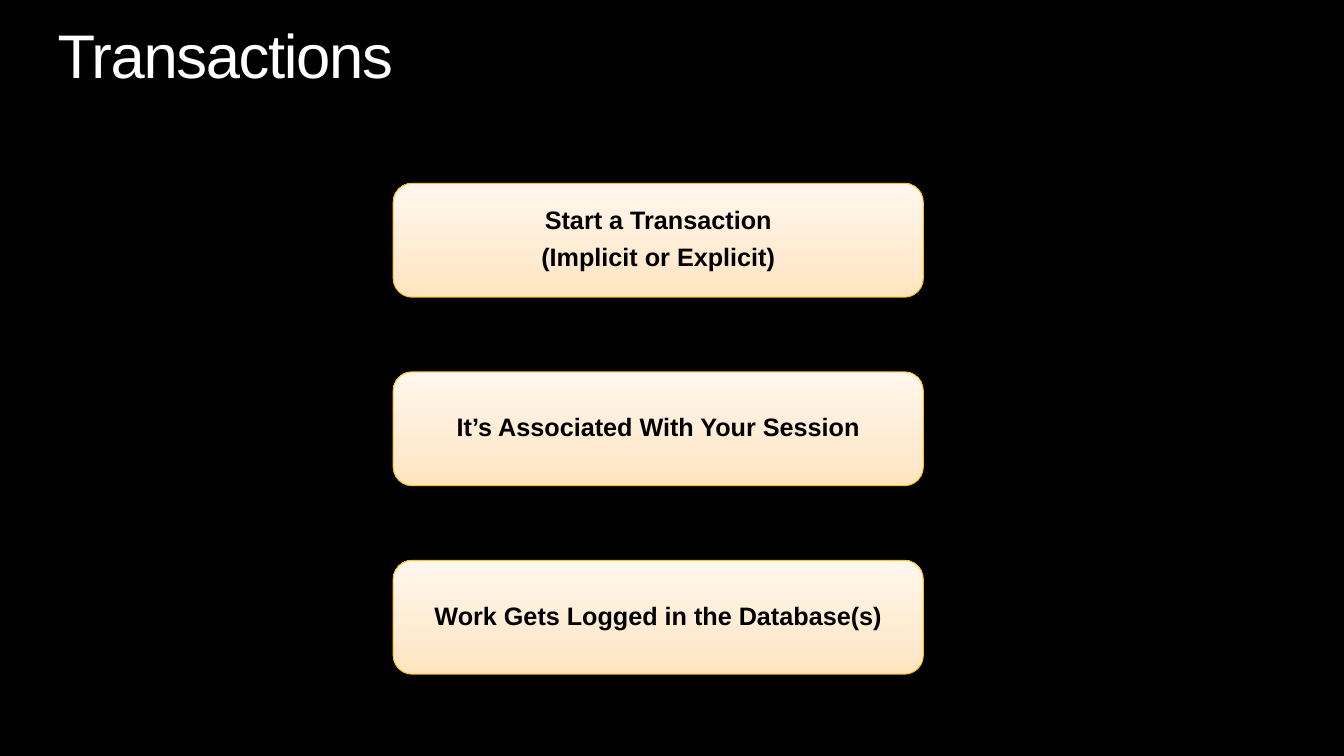
from copy import deepcopy
from dataclasses import dataclass

from pptx import Presentation
from pptx.dml.color import RGBColor as RGB
from pptx.enum.shapes import MSO_SHAPE as SHAPE
from pptx.enum.text import MSO_ANCHOR as ANCHOR, PP_ALIGN as ALIGN
from pptx.util import Cm, Pt


@dataclass(frozen=True)
class Theme:
    font: str = "Arial"
    background: RGB = RGB(0, 0, 0)
    title: RGB = RGB(255, 255, 255)
    text: RGB = RGB(0, 0, 0)
    outline: RGB = RGB.from_string("FFC21F")
    gradient: tuple = ((0, "FFE4BE"), (0.35, "FFEBD1"), (1, "FFF7EE"))
    title_size: int = 44
    text_size: int = 18


THEME = Theme()

STEPS = (
    ("Start a Transaction", "(Implicit or Explicit)"),
    ("It’s Associated With Your Session",),
    ("Work Gets Logged in the Database(s)",),
)


def set_margins(tf, margin):
    tf.margin_left = tf.margin_right = margin
    tf.margin_top = tf.margin_bottom = margin


def add_run(p, text, size, color, bold):
    p.line_spacing = 0.9
    r = p.add_run()
    r.text = text
    r.font.name = THEME.font
    r.font.size = Pt(size)
    r.font.bold = bold
    r.font.color.rgb = color
    return r


def fill_gradient(fill):
    fill.gradient()
    fill.gradient_angle = 90
    stops = fill._fill._gradFill.gsLst
    stops.insert(1, deepcopy(stops[0]))
    for stop, (position, color) in zip(fill.gradient_stops, THEME.gradient):
        stop.position = position
        stop.color.rgb = RGB.from_string(color)


def place_title(s, text, left, top, width, height):
    sp = s.shapes.title
    sp.left, sp.top, sp.width, sp.height = left, top, width, height
    tf = sp.text_frame
    tf.word_wrap = True
    tf.vertical_anchor = ANCHOR.TOP
    set_margins(tf, 0)
    p = tf.paragraphs[0]
    p.alignment = ALIGN.LEFT
    r = add_run(p, text, THEME.title_size, THEME.title, False)
    r.font._element.set("spc", "-100")


def add_step(s, lines, left, top, width, height):
    sp = s.shapes.add_shape(SHAPE.ROUNDED_RECTANGLE, left, top, width, height)
    sp.shadow.inherit = False
    fill_gradient(sp.fill)
    sp.line.color.rgb = THEME.outline
    sp.line.width = Pt(0.75)
    tf = sp.text_frame
    tf.word_wrap = True
    tf.vertical_anchor = ANCHOR.MIDDLE
    set_margins(tf, Cm(0.18))
    for i, line in enumerate(lines):
        p = tf.add_paragraph() if i else tf.paragraphs[0]
        p.alignment = ALIGN.CENTER
        p.space_after = Pt(7)
        add_run(p, line, THEME.text_size, THEME.text, True)


def add_steps(s, steps, left, top, width, height):
    step_height = Cm(2.87)
    pitch = (height - step_height) // (len(steps) - 1)
    for i, lines in enumerate(steps):
        add_step(s, lines, left, top + i * pitch, width, step_height)


def main():
    prs = Presentation()
    prs.slide_width, prs.slide_height = Cm(33.87), Cm(19.05)
    s = prs.slides.add_slide(prs.slide_layouts[5])
    s.background.fill.solid()
    s.background.fill.fore_color.rgb = THEME.background
    place_title(s, "Transactions", Cm(1.45), Cm(0.64), Cm(30.96), Cm(1.7))
    add_steps(s, STEPS, Cm(9.91), Cm(4.62), Cm(13.36), Cm(12.37))
    prs.save("out.pptx")


if __name__ == "__main__":
    main()
